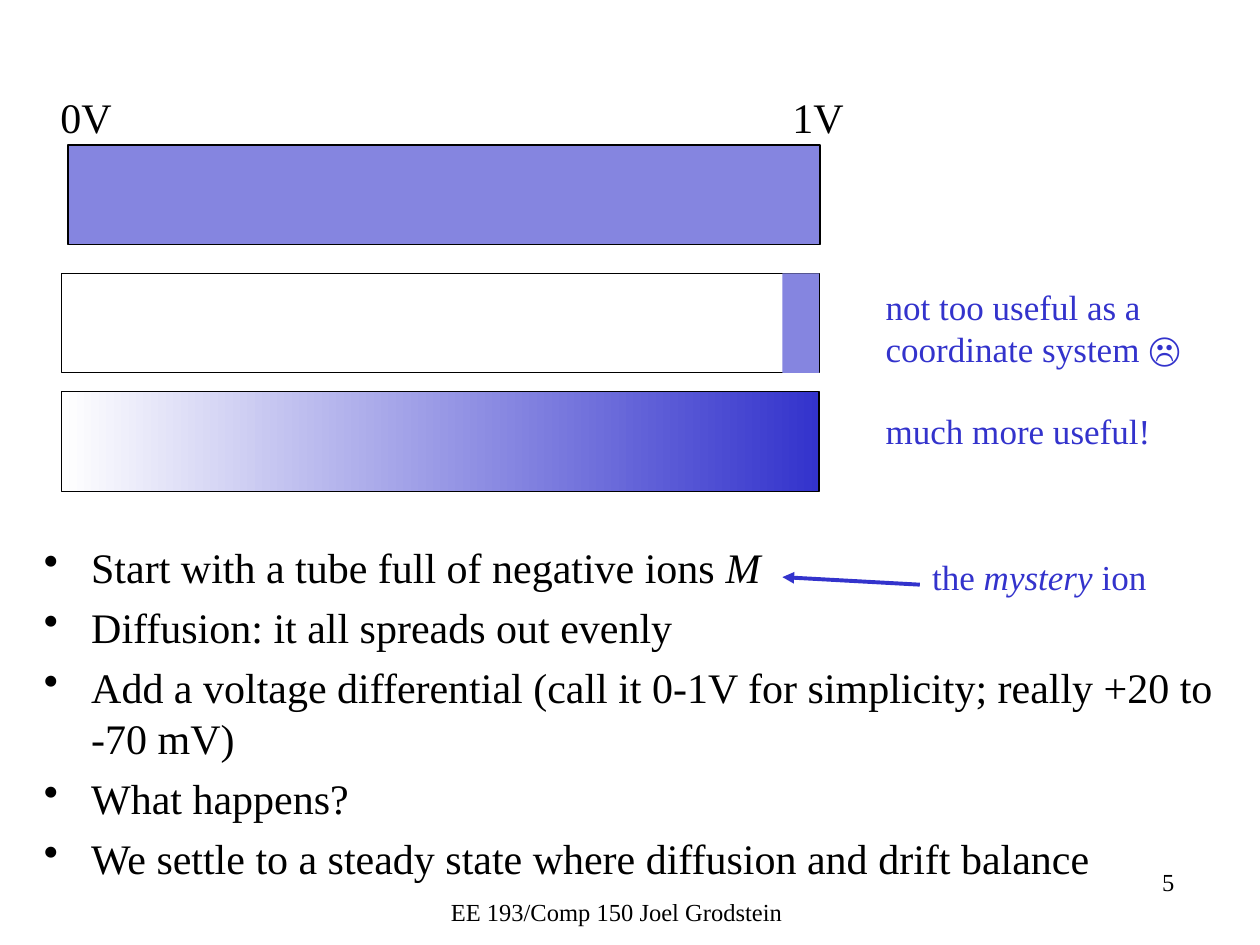
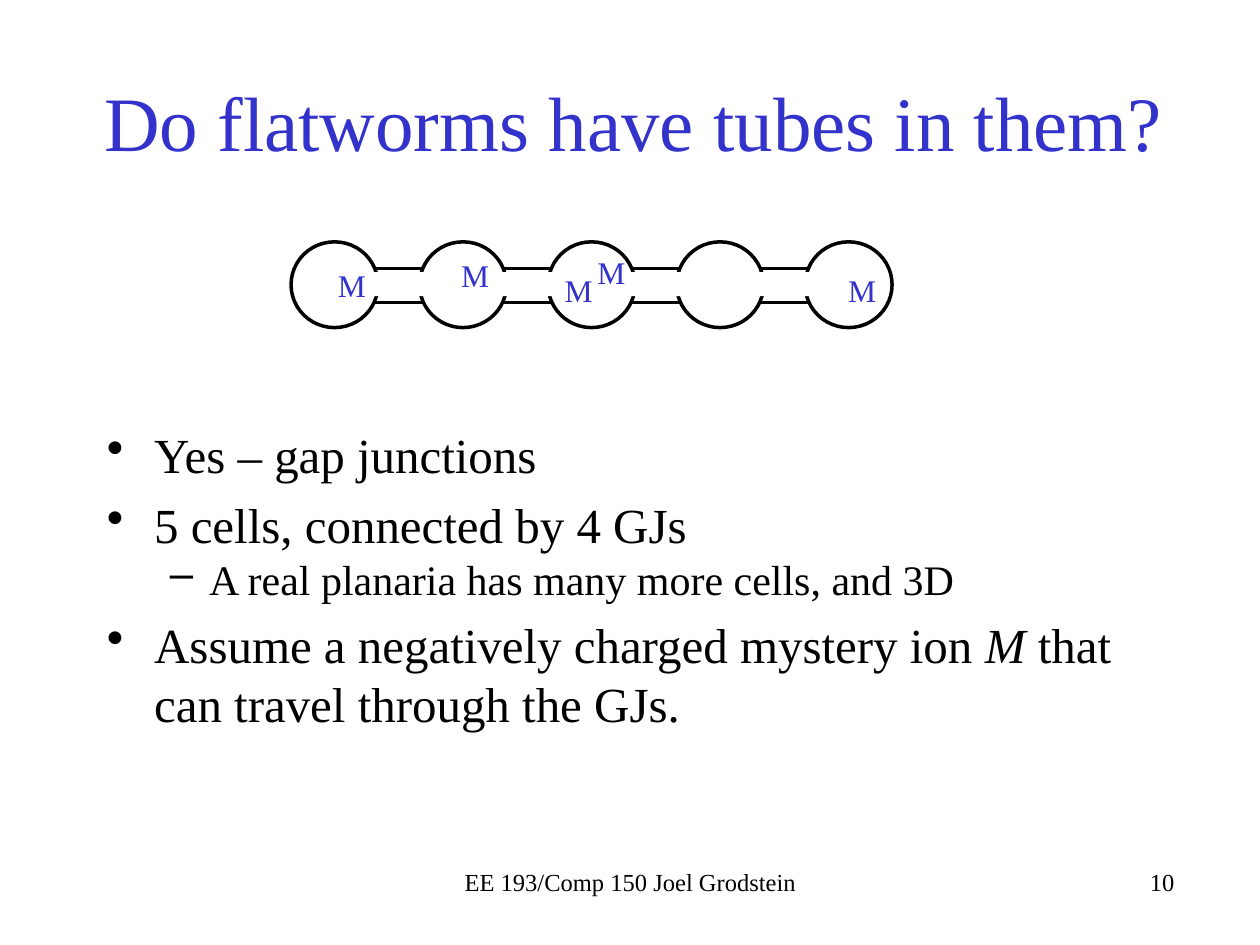
from lxml import etree
from pptx import Presentation
from pptx import util as u
from pptx.dml.color import RGBColor
from pptx.enum import shapes, text
from pptx.oxml.ns import qn

FONT = "Times New Roman"
COLORS = {"ink": "000000", "accent": "3333CC", "ions": "8585E0", "paper": "FFFFFF"}
FOOTER = "EE 193/Comp 150 Joel Grodstein"
LEFT, CENTER, RIGHT = text.PP_ALIGN.LEFT, text.PP_ALIGN.CENTER, text.PP_ALIGN.RIGHT
# Per bullet level: mark, left margin, hanging indent
BULLETS = [("•", 27, -27), ("–", 58.5, -22.5)]


def color(name):
    return RGBColor.from_string(COLORS[name])


def pts(*lengths):
    return [u.Pt(length) for length in lengths]


def write(paragraph, wording, size, ink="ink", align=LEFT):
    """Fill a paragraph; wording between asterisks is italic."""
    paragraph.alignment = align
    for index, part in enumerate(wording.split("*")):
        run = paragraph.add_run()
        run.text = part
        run.font.name, run.font.size = FONT, u.Pt(size)
        run.font.italic = index % 2 == 1
        run.font.color.rgb = color(ink)


def add_label(slide, box, wording, size, ink="ink", align=LEFT):
    frame = slide.shapes.add_textbox(*pts(*box)).text_frame
    frame.word_wrap = True
    write(frame.paragraphs[0], wording, size, ink, align)
    return frame


def add_outline(slide, box, fill=None, line_width=0.75, kind=shapes.MSO_SHAPE.RECTANGLE):
    """Add a plain shape; a line width of 0 means no line."""
    outline = slide.shapes.add_shape(kind, *pts(*box))
    outline.shadow.inherit = False
    if fill:
        outline.fill.solid()
        outline.fill.fore_color.rgb = color(fill)
    else:
        outline.fill.background()
    if line_width:
        outline.line.color.rgb = color("ink")
        outline.line.width = u.Pt(line_width)
    else:
        outline.line.fill.background()
    return outline


def add_arrow(slide, start, end):
    arrow = slide.shapes.add_connector(shapes.MSO_CONNECTOR.STRAIGHT, *pts(*start, *end))
    arrow.line.color.rgb = color("accent")
    arrow.line.width = u.Pt(2.25)
    properties = arrow._element.spPr
    etree.SubElement(properties.find(qn("a:ln")), qn("a:tailEnd"), type="triangle")
    etree.SubElement(properties, qn("a:effectLst"))


def add_bullets(slide, box, points):
    """Add a list of (level, size, wording) points."""
    frame = slide.shapes.add_textbox(*pts(*box)).text_frame
    frame.word_wrap = True
    for index, (level, size, wording) in enumerate(points):
        point = frame.add_paragraph() if index else frame.paragraphs[0]
        write(point, wording, size)
        point.level = level
        point.space_before = u.Pt(0 if level else round(size * 0.23, 1))
        mark, margin, indent = BULLETS[level]
        properties = point._p.get_or_add_pPr()
        properties.set("marL", str(u.Pt(margin)))
        properties.set("indent", str(u.Pt(indent)))
        etree.SubElement(properties, qn("a:buChar"), char=mark)


def add_footer(slide, left, top, number):
    add_label(slide, (450, 491.8, 228.2, 36), number, 14, align=RIGHT)
    add_label(slide, (left, top, 228.2, 24.5), FOOTER, 14, align=CENTER)


def add_title(slide, box, wording):
    title = slide.shapes.title
    title.left, title.top, title.width, title.height = pts(*box)
    frame = title.text_frame
    frame.auto_size = text.MSO_AUTO_SIZE.NONE
    frame.vertical_anchor = text.MSO_ANCHOR.MIDDLE
    write(frame.paragraphs[0], wording, 44, "accent", CENTER)


def draw_tubes(slide, left, top, width):
    """Draw the even, the crowded and the graded tube with their voltages."""
    height, crowd = 56.9, 20.9
    for offset, voltage in ((-7.9, "0V"), (410.4, "1V")):
        add_label(slide, (left + offset, top - 33.8, 46.8, 36), voltage, 24)
    add_outline(slide, (left + 3.6, top, width - 2.9, height), "ions")

    graded = add_outline(slide, (left, top + 141.1, width, height))
    graded.fill.gradient()
    graded.fill.gradient_angle = 0
    for stop, name in zip(graded.fill.gradient_stops, ("paper", "accent")):
        stop.color.rgb = color(name)

    crowded_top = top + 73.4
    add_outline(slide, (left, crowded_top, width, height))
    add_outline(slide, (left + width - crowd, crowded_top, crowd, height), "ions", 0)


def draw_cell_chain(slide, left, top, cell_width, cell_height):
    """Draw five cells joined by gap junctions, with ions inside."""
    add_outline(slide, (left + 34.6, top + 15.2, 286.6, 19.4), "paper", 2)
    for cell in range(5):
        add_outline(slide, (left + cell * 73.44, top, cell_width, cell_height),
                    "paper", 2, shapes.MSO_SHAPE.OVAL)
    add_outline(slide, (left + 31.7, top + 17.3, 291.6, 13.7), "paper", 0)
    ions = [(318.3, 16.6), (26.7, 13.7), (175, 6.5), (97.2, 8), (156.3, 16.6)]
    for x, y in ions:
        ion = add_label(slide, (left + x, top + y, 15.8, 21.6), "M", 18, "accent")
        ion.word_wrap = False
        ion.vertical_anchor = text.MSO_ANCHOR.MIDDLE
        ion.margin_left = ion.margin_right = ion.margin_top = ion.margin_bottom = 0


def build_drift_slide(deck):
    slide = deck.slides.add_slide(deck.slide_layouts[6])
    add_bullets(slide, (18, 306, 692.6, 202.3), [(0, 24, wording) for wording in (
        "Start with a tube full of negative ions *M*",
        "Diffusion: it all spreads out evenly",
        "Add a voltage differential (call it 0-1V for simplicity; really +20 to -70 mV)",
        "What happens?",
        "We settle to a steady state where diffusion and drift balance",
    )])
    draw_tubes(slide, 35.3, 82.8, 432.7)
    for box, remark in (
        ((499, 159.8, 190, 55.4), "not too useful as a coordinate system ☹"),
        ((499, 230.4, 190, 31.7), "much more useful!"),
        ((525.6, 313.9, 136.8, 31.7), "the *mystery* ion"),
    ):
        add_label(slide, box, remark, 20, "accent")
    add_arrow(slide, (525.6, 334.1), (447.1, 329.8))
    add_footer(slide, 238.3, 509, "5")


def build_flatworm_slide(deck):
    slide = deck.slides.add_slide(deck.slide_layouts[5])
    add_title(slide, (49, 23.8, 626.4, 90), "Do flatworms have tubes in them?")
    draw_cell_chain(slide, 166.3, 138.2, 49.7, 49)
    add_bullets(slide, (54, 239, 612, 184.3), [
        (0, 28, "Yes – gap junctions"),
        (0, 28, "5 cells, connected by 4 GJs"),
        (1, 24, "A real planaria has many more cells, and 3D"),
        (0, 28, "Assume a negatively charged mystery ion *M* that can travel through the GJs."),
    ])
    add_footer(slide, 246.2, 491.8, "10")


def main():
    deck = Presentation()
    deck.slide_width, deck.slide_height = pts(720, 540)
    build_drift_slide(deck)
    build_flatworm_slide(deck)
    deck.save("out.pptx")


if __name__ == "__main__":
    main()
